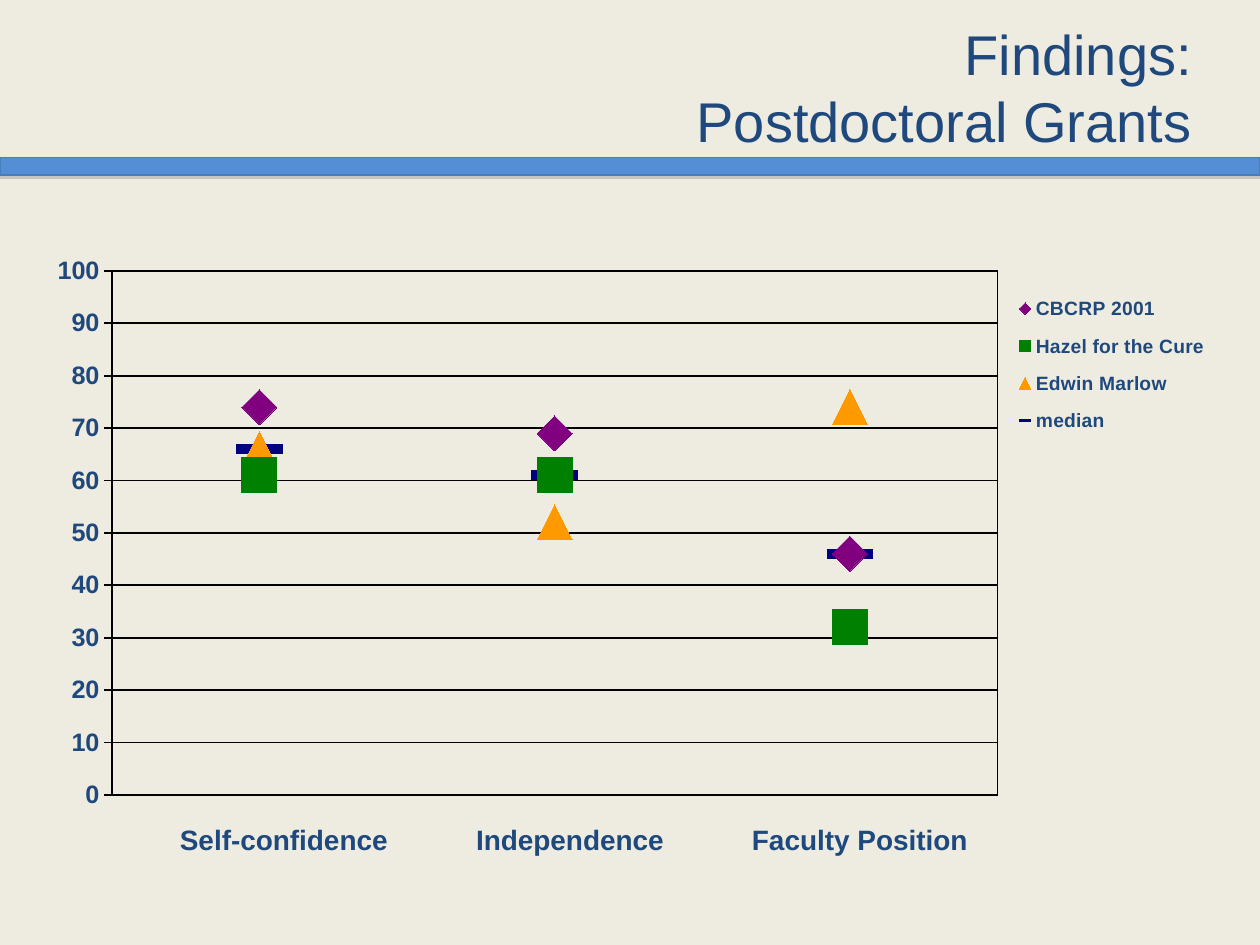
from lxml.etree import SubElement
from pptx import Presentation
from pptx.chart.data import XyChartData
from pptx.dml.color import RGBColor
from pptx.enum.chart import (
    XL_CHART_TYPE as ChartType,
    XL_LEGEND_POSITION as LegendPosition,
    XL_MARKER_STYLE as Marker,
    XL_TICK_LABEL_POSITION as LabelPosition,
    XL_TICK_MARK as Tick,
)
from pptx.enum.shapes import MSO_SHAPE as Shape
from pptx.enum.text import MSO_ANCHOR as Anchor, PP_ALIGN as Align
from pptx.oxml import parse_xml
from pptx.oxml.ns import nsdecls, qn
from pptx.util import Inches, Pt

COLORS = {
    "background": "EEECE1",
    "text": "1F497D",
    "rule": "558ED5",
    "rule_edge": "4A7EBB",
    "shadow": "808080",
    "axis": "000000",
    "purple": "800080",
    "green": "008000",
    "orange": "FF9900",
    "navy": "000080",
}
TITLE_FORMAT = {"name": "Arial", "size": Pt(32), "bold": False}
CATEGORY_FORMAT = {"name": "Arial", "size": Pt(16), "bold": True}
CHART_FORMAT = {"name": "Arial", "size": Pt(14.4), "bold": True}
LEGEND_FORMAT = {"name": "Arial", "size": Pt(11), "bold": True}

SCORES = [
    ("CBCRP 2001", (74, 69, 46), "purple", Marker.DIAMOND, 20),
    ("Hazel for the Cure", (61, 61, 32), "green", Marker.SQUARE, 20),
    ("Edwin Marlow", (66, 52, 74), "orange", Marker.TRIANGLE, 20),
    ("median", (66, 61, 46), "navy", Marker.DASH, 26),
]
CATEGORIES = [
    ("Self-confidence", 1.33, 1.87),
    ("Independence", 3.68, 1.71),
    ("Faculty Position", 5.87, 1.94),
]


def color(name):
    return RGBColor.from_string(COLORS[name])


def apply_format(target, values):
    for attribute, value in values.items():
        setattr(target, attribute, value)


def style_font(font, values):
    apply_format(font, values)
    font.color.rgb = color("text")


def style_line(line, name, width):
    line.color.rgb = color(name)
    line.width = Pt(width)


def set_layout(parent, box, inner=False):
    layout = parent.get_or_add_layout() if hasattr(parent, "get_or_add_layout") else None
    if layout is None:
        layout = parent.find(qn("c:layout"))
        if layout is None:
            layout = parse_xml(f"<c:layout {nsdecls('c')}/>")
            parent.insert(0 if inner else 1, layout)
    for child in list(layout):
        layout.remove(child)
    manual = SubElement(layout, qn("c:manualLayout"))
    entries = [("layoutTarget", "inner")] if inner else []
    entries += [("xMode", "edge"), ("yMode", "edge")]
    entries += zip("xywh", box)
    for tag, value in entries:
        SubElement(manual, qn(f"c:{tag}"), val=str(value))


def add_rule(slide, box):
    rule = slide.shapes.add_shape(Shape.RECTANGLE, *map(Inches, box))
    rule.fill.solid()
    rule.fill.fore_color.rgb = color("rule")
    style_line(rule.line, "rule_edge", 0.75)
    rule.shadow.inherit = False
    effects = rule._element.spPr.find(qn("a:effectLst"))
    effects.append(parse_xml(
        f'<a:outerShdw {nsdecls("a")} blurRad="0" dist="{Pt(1.8)}" dir="5400000" '
        f'rotWithShape="0"><a:srgbClr val="{COLORS["shadow"]}">'
        '<a:alpha val="35000"/></a:srgbClr></a:outerShdw>'
    ))


def add_title(slide, box):
    frame = slide.shapes.add_textbox(*map(Inches, box)).text_frame
    apply_format(frame, {"word_wrap": True, "vertical_anchor": Anchor.MIDDLE})
    frame.text = "Findings:\nPostdoctoral Grants"
    for paragraph in frame.paragraphs:
        paragraph.alignment = Align.RIGHT
        style_font(paragraph.font, TITLE_FORMAT)
    frame.paragraphs[0]._p.get_or_add_pPr().set("marR", str(Inches(0.37)))


def style_axes(chart):
    grant_axis, score_axis = chart.category_axis, chart.value_axis
    apply_format(grant_axis, {
        "minimum_scale": 0.5, "maximum_scale": 3.5, "major_unit": 1,
        "has_major_gridlines": False, "major_tick_mark": Tick.NONE,
        "minor_tick_mark": Tick.NONE, "tick_label_position": LabelPosition.NONE,
    })
    apply_format(score_axis, {
        "minimum_scale": 0, "maximum_scale": 100, "major_unit": 10,
        "has_major_gridlines": True, "major_tick_mark": Tick.OUTSIDE,
        "minor_tick_mark": Tick.NONE,
    })
    style_line(grant_axis.format.line, "axis", 0.25)
    style_line(score_axis.format.line, "axis", 1.05)
    style_line(score_axis.major_gridlines.format.line, "axis", 1.05)
    style_font(score_axis.tick_labels.font, CHART_FORMAT)


def add_score_chart(slide, box):
    data = XyChartData(number_format="0")
    for name, scores, *_ in SCORES:
        series = data.add_series(name)
        for position, score in enumerate(scores, 1):
            series.add_data_point(position, score)
    chart = slide.shapes.add_chart(
        ChartType.XY_SCATTER, *map(Inches, box), data
    ).chart
    apply_format(chart, {"has_title": False, "has_legend": True})
    style_font(chart.font, CHART_FORMAT)
    style_axes(chart)

    for series, (_, _, hue, marker, size) in zip(chart.plots[0].series, SCORES):
        series.format.line.fill.background()
        apply_format(series.marker, {"style": marker, "size": size})
        series.marker.format.fill.solid()
        series.marker.format.fill.fore_color.rgb = color(hue)
        series.marker.format.line.color.rgb = color(hue)

    legend = chart.legend
    apply_format(legend, {
        "position": LegendPosition.RIGHT, "include_in_layout": False,
    })
    style_font(legend.font, LEGEND_FORMAT)
    set_layout(legend._element, (0.8, 0.1, 0.2, 0.27))

    plot_area = chart._chartSpace.chart.plotArea
    set_layout(plot_area, (0.06, 0.081, 0.744, 0.861), inner=True)
    plot_area.append(parse_xml(
        f'<c:spPr {nsdecls("c", "a")}><a:noFill/><a:ln w="{Pt(0.25)}"><a:solidFill>'
        f'<a:srgbClr val="{COLORS["axis"]}"/></a:solidFill></a:ln></c:spPr>'
    ))


def add_category_labels(slide, top, height):
    for label, left, width in CATEGORIES:
        box = map(Inches, (left, top, width, height))
        frame = slide.shapes.add_textbox(*box).text_frame
        frame.word_wrap = False
        frame.text = label
        style_font(frame.paragraphs[0].font, CATEGORY_FORMAT)


def main():
    deck = Presentation()
    apply_format(deck, {"slide_width": Inches(10), "slide_height": Inches(7.5)})
    slide = deck.slides.add_slide(deck.slide_layouts[6])
    slide.background.fill.solid()
    slide.background.fill.fore_color.rgb = color("background")
    add_rule(slide, (0, 1.25, 10, 0.14))
    add_score_chart(slide, (0.32, 1.76, 9.45, 4.83))
    add_category_labels(slide, 6.48, 0.37)
    add_title(slide, (5.1, 0.11, 4.83, 1.15))
    deck.save("out.pptx")


if __name__ == "__main__":
    main()
